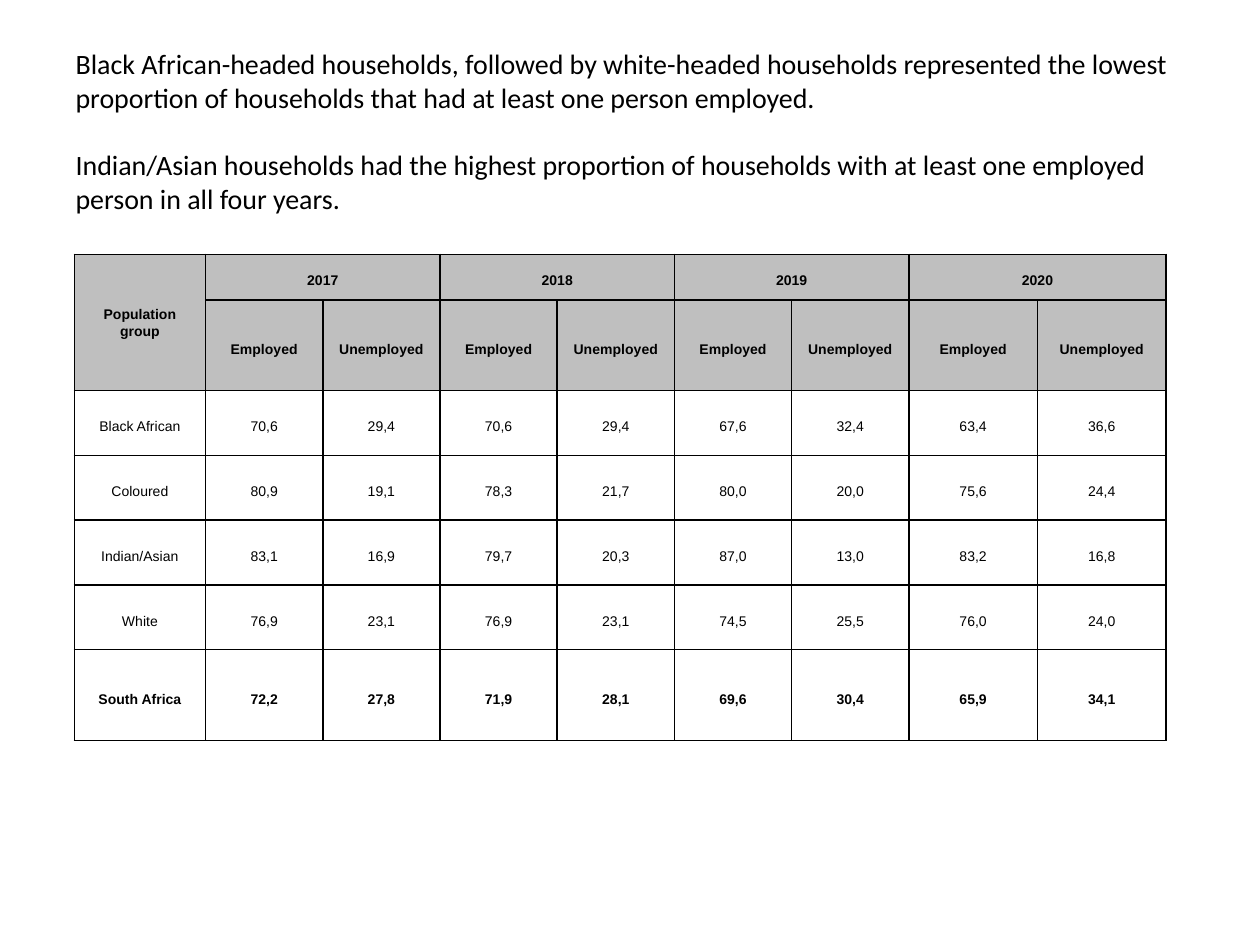
from lxml.etree import SubElement
from pptx import Presentation
from pptx.dml.color import RGBColor
from pptx.enum.text import MSO_ANCHOR as Anchor, PP_ALIGN as Align
from pptx.oxml.ns import qn
from pptx.util import Pt

BLACK = "000000"
HEADER_GREY = "BFBFBF"

STATEMENTS = [
    "Black African-headed households, followed by white-headed households represented "
    "the lowest proportion of households that had at least one person employed.",
    "Indian/Asian households had the highest proportion of households with at least "
    "one employed person in all four years.",
]
YEARS = ["2017", "2018", "2019", "2020"]
STATUSES = ["Employed", "Unemployed"]
GROUP_ROWS = [
    ["Black African", "70,6", "29,4", "70,6", "29,4", "67,6", "32,4", "63,4", "36,6"],
    ["Coloured", "80,9", "19,1", "78,3", "21,7", "80,0", "20,0", "75,6", "24,4"],
    ["Indian/Asian", "83,1", "16,9", "79,7", "20,3", "87,0", "13,0", "83,2", "16,8"],
    ["White", "76,9", "23,1", "76,9", "23,1", "74,5", "25,5", "76,0", "24,0"],
    ["South Africa", "72,2", "27,8", "71,9", "28,1", "69,6", "30,4", "65,9", "34,1"],
]
COLUMN_WIDTHS = [75] + [67] * 6 + [73.5] * 2
ROW_HEIGHTS = [26, 52] + [37] * 4 + [52]

TITLE_BOX = {"left": Pt(36), "top": Pt(21.6), "width": Pt(648), "height": Pt(124)}
TITLE_FRAME = {"word_wrap": True, "vertical_anchor": Anchor.TOP, "margin_top": Pt(5)}
TITLE_FONT = {"name": "Calibri", "size": Pt(16), "bold": False}
CELL_FORMAT = {
    "vertical_anchor": Anchor.MIDDLE,
    "margin_left": Pt(5),
    "margin_right": Pt(5),
    "margin_top": 0,
    "margin_bottom": 0,
}
CELL_FONT = {"name": "Arial", "size": Pt(8)}


def color(hex_value):
    return RGBColor.from_string(hex_value)


def set_attributes(target, values):
    for name, value in values.items():
        setattr(target, name, value)


def format_paragraph(paragraph, layout, font):
    set_attributes(paragraph, layout)
    set_attributes(paragraph.font, font)
    paragraph.font.color.rgb = color(BLACK)


def add_title(slide):
    title = slide.shapes.title
    set_attributes(title, TITLE_BOX)
    frame = title.text_frame
    set_attributes(frame, TITLE_FRAME)
    frame.text = "\n".join(STATEMENTS)
    for index, paragraph in enumerate(frame.paragraphs):
        layout = {"alignment": Align.LEFT, "space_before": Pt(19.5 * index)}
        format_paragraph(paragraph, layout, TITLE_FONT)


def add_borders(cell):
    properties = cell._tc.get_or_add_tcPr()
    for index, side in enumerate(["lnL", "lnR", "lnT", "lnB"]):
        line = SubElement(properties, qn(f"a:{side}"), w=str(Pt(1)))
        fill = SubElement(line, qn("a:solidFill"))
        SubElement(fill, qn("a:srgbClr"), val=BLACK)
        properties.remove(line)
        properties.insert(index, line)


def format_cell(cell, is_header, is_bold, line_spacing):
    set_attributes(cell, CELL_FORMAT)
    if is_header:
        cell.fill.solid()
        cell.fill.fore_color.rgb = color(HEADER_GREY)
    else:
        cell.fill.background()
    add_borders(cell)
    layout = {"alignment": Align.CENTER, "line_spacing": line_spacing}
    format_paragraph(cell.text_frame.paragraphs[0], layout, CELL_FONT | {"bold": is_bold})


def add_employment_table(slide):
    year_row = ["Population group"] + [text for year in YEARS for text in (year, "")]
    rows = [year_row, [""] + STATUSES * len(YEARS)] + GROUP_ROWS
    frame = slide.shapes.add_table(
        len(rows), len(COLUMN_WIDTHS), Pt(42.5), Pt(145.3),
        Pt(sum(COLUMN_WIDTHS)), Pt(sum(ROW_HEIGHTS)),
    )
    table = frame.table
    set_attributes(table, {"first_row": False, "horz_banding": False})
    for column, width in zip(table.columns, COLUMN_WIDTHS):
        column.width = Pt(width)
    for row, height in zip(table.rows, ROW_HEIGHTS):
        row.height = Pt(height)
    for row_index, texts in enumerate(rows):
        is_header = row_index < 2
        is_bold = is_header or row_index == len(rows) - 1
        for column_index, text in enumerate(texts):
            cell = table.cell(row_index, column_index)
            cell.text = text
            line_spacing = 1.07 if is_header and column_index == 0 else 1.5
            format_cell(cell, is_header, is_bold, line_spacing)
    table.cell(0, 0).merge(table.cell(1, 0))
    for first in range(1, len(COLUMN_WIDTHS), len(STATUSES)):
        table.cell(0, first).merge(table.cell(0, first + 1))


def main():
    presentation = Presentation()
    set_attributes(presentation, {"slide_width": Pt(720), "slide_height": Pt(540)})
    slide = presentation.slides.add_slide(presentation.slide_layouts[5])
    add_title(slide)
    add_employment_table(slide)
    presentation.save("out.pptx")


if __name__ == "__main__":
    main()
